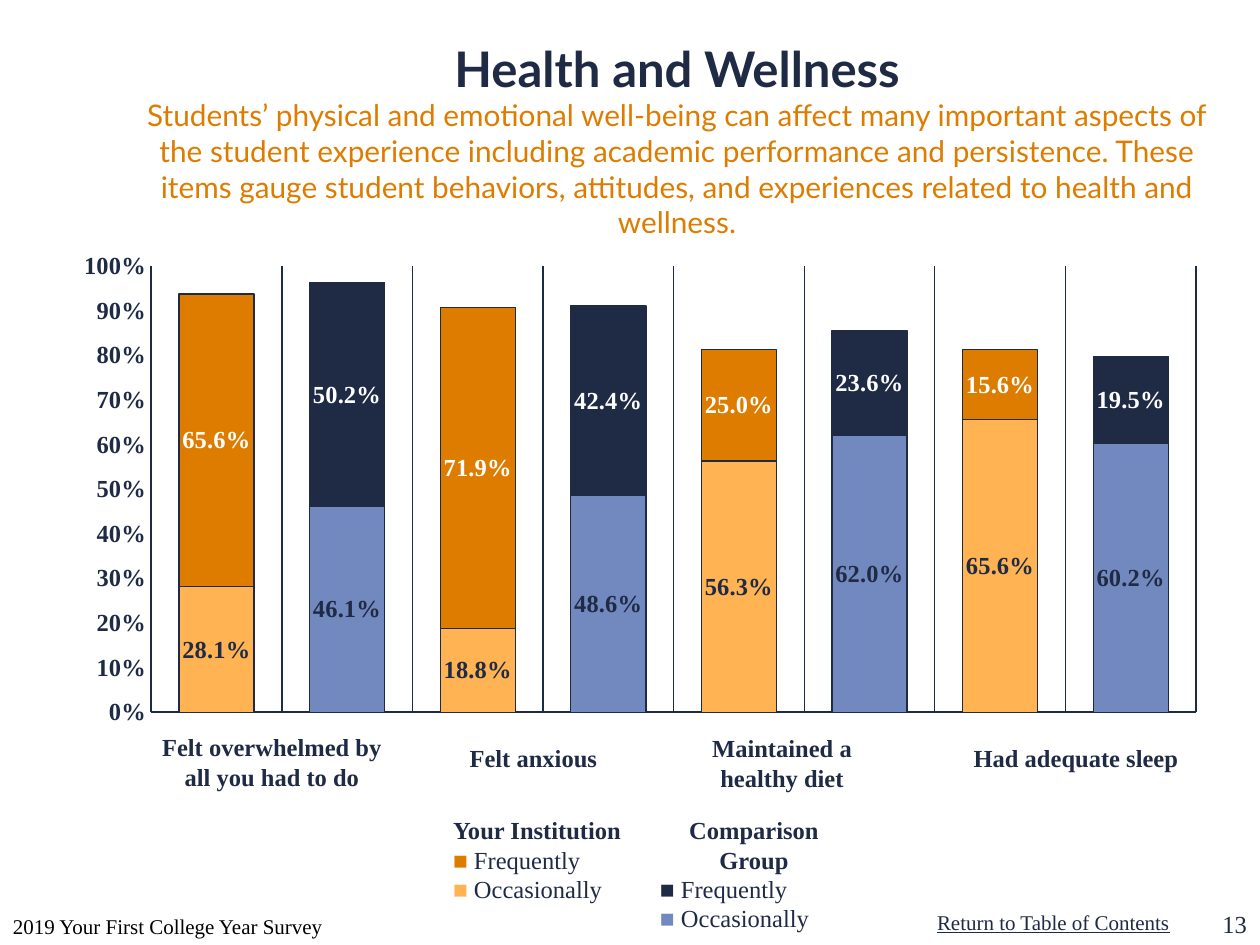
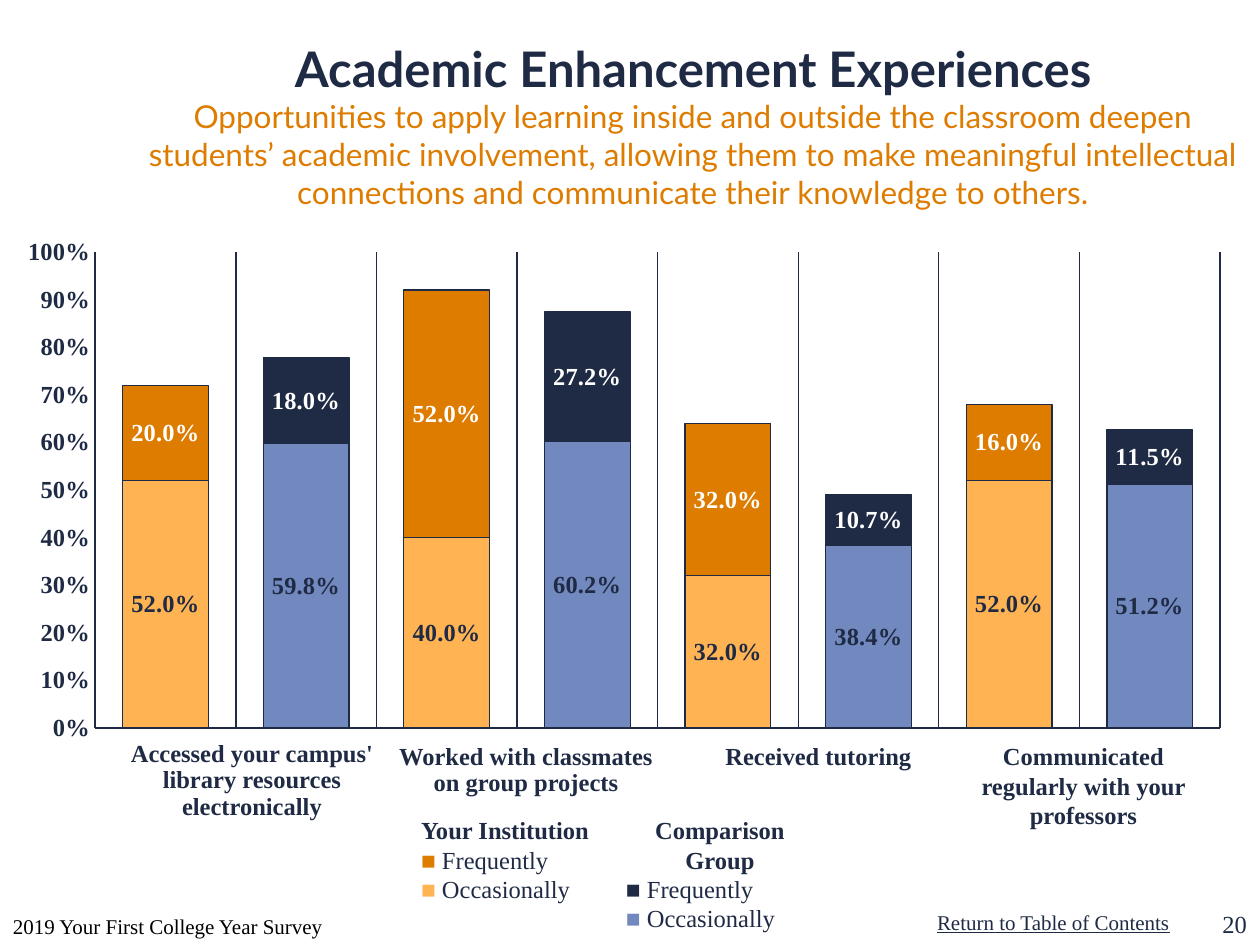
from dataclasses import dataclass

from lxml import etree
from pptx import Presentation
from pptx.chart.data import CategoryChartData
from pptx.dml.color import RGBColor
from pptx.enum.chart import XL_CHART_TYPE, XL_LABEL_POSITION, XL_TICK_LABEL_POSITION, XL_TICK_MARK
from pptx.enum.text import MSO_ANCHOR, PP_ALIGN
from pptx.oxml.ns import qn
from pptx.util import Emu, Pt

LEFT, CENTER, RIGHT = PP_ALIGN.LEFT, PP_ALIGN.CENTER, PP_ALIGN.RIGHT
TOP, BOTTOM = MSO_ANCHOR.TOP, MSO_ANCHOR.BOTTOM
STACKED = XL_CHART_TYPE.COLUMN_STACKED
LABEL_CENTER = XL_LABEL_POSITION.CENTER
NO_LABELS = XL_TICK_LABEL_POSITION.NONE
NO_TICKS = XL_TICK_MARK.NONE

PX_PER_INCH = 126
PLOT_LEFT, PLOT_TOP, PLOT_SHARE = 67, 14, 0.93


@dataclass(frozen=True)
class Theme:
    navy: str = "1F2A44"
    blue: str = "7289BF"
    orange: str = "DE7C00"
    apricot: str = "FFB352"
    white: str = "FFFFFF"
    black: str = "000000"
    heading_font: str = "Lato"
    body_font: str = "Times New Roman"
    heading_size: int = 28
    body_size: int = 14
    footer_size: int = 12


THEME = Theme()

SLIDES = [
    dict(
        number="13",
        heading="Health and Wellness",
        summary="Students’ physical and emotional well-being can affect many important aspects of "
                "the student experience including academic performance and persistence. These items "
                "gauge student behaviors, attitudes, and experiences related to health and wellness.",
        summary_size=17,
        title_box=(126, 32, 1102, 192),
        chart_box=(84, 252, 1113, 480),
        gap=74,
        occasionally=(0.281, 0.461, 0.188, 0.486, 0.563, 0.62, 0.656, 0.602),
        frequently=(0.656, 0.502, 0.719, 0.424, 0.25, 0.236, 0.156, 0.195),
        labels=[
            ("Felt overwhelmed by all you had to do", (141, 726, 262, 72), None),
            ("Felt anxious", (444, 737, 179, 43), None),
            ("Maintained a healthy diet", (667, 727, 230, 72), None),
            ("Had adequate sleep", (955, 737, 242, 43), None),
        ],
        legend_box=(440, 809, 428, 131),
    ),
    dict(
        number="20",
        heading="Academic Enhancement Experiences",
        summary="Opportunities to apply learning inside and outside the classroom deepen students’ "
                "academic involvement, allowing them to make meaningful intellectual connections "
                "and communicate their knowledge to others.",
        summary_size=18,
        title_box=(126, 32, 1134, 158),
        chart_box=(28, 238, 1193, 512),
        gap=64,
        occasionally=(0.52, 0.598, 0.4, 0.602, 0.32, 0.384, 0.52, 0.512),
        frequently=(0.2, 0.18, 0.52, 0.272, 0.32, 0.107, 0.16, 0.115),
        labels=[
            ("Accessed your campus' library resources electronically", (105, 735, 294, 92), 15),
            ("Worked with classmates on group projects", (379, 738, 294, 66), 15),
            ("Received tutoring", (703, 735, 231, 43), None),
            ("Communicated regularly with your professors", (946, 735, 275, 102), None),
        ],
        legend_box=(408, 809, 426, 131),
    ),
]


def px(length):
    return Emu(round(length * 914400 / PX_PER_INCH))


def rgb(code):
    return RGBColor.from_string(code)


def style_font(font, size=THEME.body_size, color=THEME.navy, bold=False,
               name=THEME.body_font, underline=False):
    font.name = name
    font.size = Pt(size)
    font.bold = bold
    font.underline = underline
    font.color.rgb = rgb(color)


def add_text(page, box, lines, align=LEFT, anchor=TOP, wrap=True, inset=13, leading=None, **style):
    frame = page.shapes.add_textbox(*map(px, box)).text_frame
    frame.word_wrap = wrap
    frame.vertical_anchor = anchor
    frame.margin_left = frame.margin_right = px(inset)
    for index, line in enumerate([lines] if isinstance(lines, str) else lines):
        para = frame.paragraphs[0] if index == 0 else frame.add_paragraph()
        spans = [(line, {})] if isinstance(line, str) else line
        para.alignment = align
        if leading:
            para.line_spacing = Pt(leading)
        for text, changes in spans:
            span = para.add_run()
            span.text = text
            style_font(span.font, **{**style, **changes})
    return frame


def add_title(page, box, heading, summary, summary_size):
    add_text(page, box, [
        [(heading, dict(size=THEME.heading_size, bold=True))],
        [(summary, dict(size=summary_size, color=THEME.orange))],
    ], align=CENTER, name=THEME.heading_font)


def add_footer(page, box, number):
    left, top, width, height = box
    add_text(page, (left, top, 399, height), "2019 Your First College Year Survey",
             anchor=BOTTOM, size=THEME.footer_size, color=THEME.black)
    add_text(page, (left + 924, top + 21, 261, 38), "Return to Table of Contents",
             wrap=False, size=THEME.footer_size, underline=True)
    add_text(page, (left + width - 63, top, 63, height), number, align=RIGHT, anchor=BOTTOM)


def set_plot_area(chart, width, height):
    area = chart.plots[0]._element.getparent()
    for old in area.findall(qn("c:layout")):
        area.remove(old)
    layout = etree.Element(qn("c:layout"))
    area.insert(0, layout)
    manual = etree.SubElement(layout, qn("c:manualLayout"))
    settings = dict(layoutTarget="inner", xMode="edge", yMode="edge",
                    x=PLOT_LEFT / width, y=PLOT_TOP / height,
                    w=1 - PLOT_LEFT / width, h=PLOT_SHARE)
    for tag, value in settings.items():
        etree.SubElement(manual, qn("c:" + tag)).set("val", str(value))


def paint_bar(bar, color):
    bar.fill.solid()
    bar.fill.fore_color.rgb = rgb(color)
    draw_line(bar.line, 0.75)


def draw_line(line, weight):
    line.color.rgb = rgb(THEME.navy)
    line.width = Pt(weight)


def style_axes(chart):
    for axis in (chart.category_axis, chart.value_axis):
        axis.major_tick_mark = axis.minor_tick_mark = NO_TICKS
        draw_line(axis.format.line, 1)
    chart.category_axis.tick_label_position = NO_LABELS
    chart.category_axis.has_major_gridlines = True
    draw_line(chart.category_axis.major_gridlines.format.line, 0.75)
    values = chart.value_axis
    values.has_major_gridlines = False
    values.minimum_scale, values.maximum_scale, values.major_unit = 0, 1, 0.1
    values.tick_labels.number_format = "0%"
    values.tick_labels.number_format_is_linked = False
    style_font(values.tick_labels.font, bold=True)


def add_response_chart(page, box, gap, occasionally, frequently):
    data = CategoryChartData()
    data.categories = [str(number + 1) for number in range(len(occasionally))]
    data.add_series("Series 1", occasionally)
    data.add_series("Series 2", frequently)
    chart = page.shapes.add_chart(STACKED, *map(px, box), data).chart
    chart.has_legend = chart.has_title = False
    style_font(chart.font, size=18, color=THEME.white)
    plot = chart.plots[0]
    plot.gap_width, plot.overlap = gap, 100
    plot.vary_by_categories = False
    palette = [(THEME.apricot, THEME.blue, THEME.navy), (THEME.orange, THEME.navy, THEME.white)]
    for series, (institution, comparison, label_color) in zip(plot.series, palette):
        paint_bar(series.format, institution)
        for index in range(1, len(occasionally), 2):
            paint_bar(series.points[index].format, comparison)
        labels = series.data_labels
        labels.show_value = True
        labels.number_format = "0.0%"
        labels.number_format_is_linked = False
        labels.position = LABEL_CENTER
        style_font(labels.font, color=label_color, bold=True)
    style_axes(chart)
    set_plot_area(chart, *box[2:])


def legend_entry(name, color):
    return [("■ ", dict(color=color, bold=True)), (name, {})]


def add_legend(page, box):
    left, top, width, height = box
    groups = [
        ("Your Institution", 0, 218, 13, LEFT, THEME.orange, THEME.apricot),
        ("Comparison Group", width - 228, 228, 20, CENTER, THEME.navy, THEME.blue),
    ]
    for name, offset, span_width, inset, align, often, sometimes in groups:
        frame = add_text(page, (left + offset, top, span_width, height), [
            [(name, dict(bold=True))],
            legend_entry("Frequently", often),
            legend_entry("Occasionally", sometimes),
        ], inset=inset)
        frame.paragraphs[0].alignment = align


def add_survey_slide(deck, content):
    page = deck.slides.add_slide(deck.slide_layouts[6])
    add_title(page, content["title_box"], content["heading"], content["summary"],
              content["summary_size"])
    add_footer(page, (0, 882, 1260, 63), content["number"])
    add_response_chart(page, content["chart_box"], content["gap"],
                       content["occasionally"], content["frequently"])
    for text, box, leading in content["labels"]:
        add_text(page, box, text, align=CENTER, leading=leading, bold=True)
    add_legend(page, content["legend_box"])


def main():
    deck = Presentation()
    deck.slide_width, deck.slide_height = px(1260), px(945)
    for content in SLIDES:
        add_survey_slide(deck, content)
    deck.save("out.pptx")


if __name__ == "__main__":
    main()
